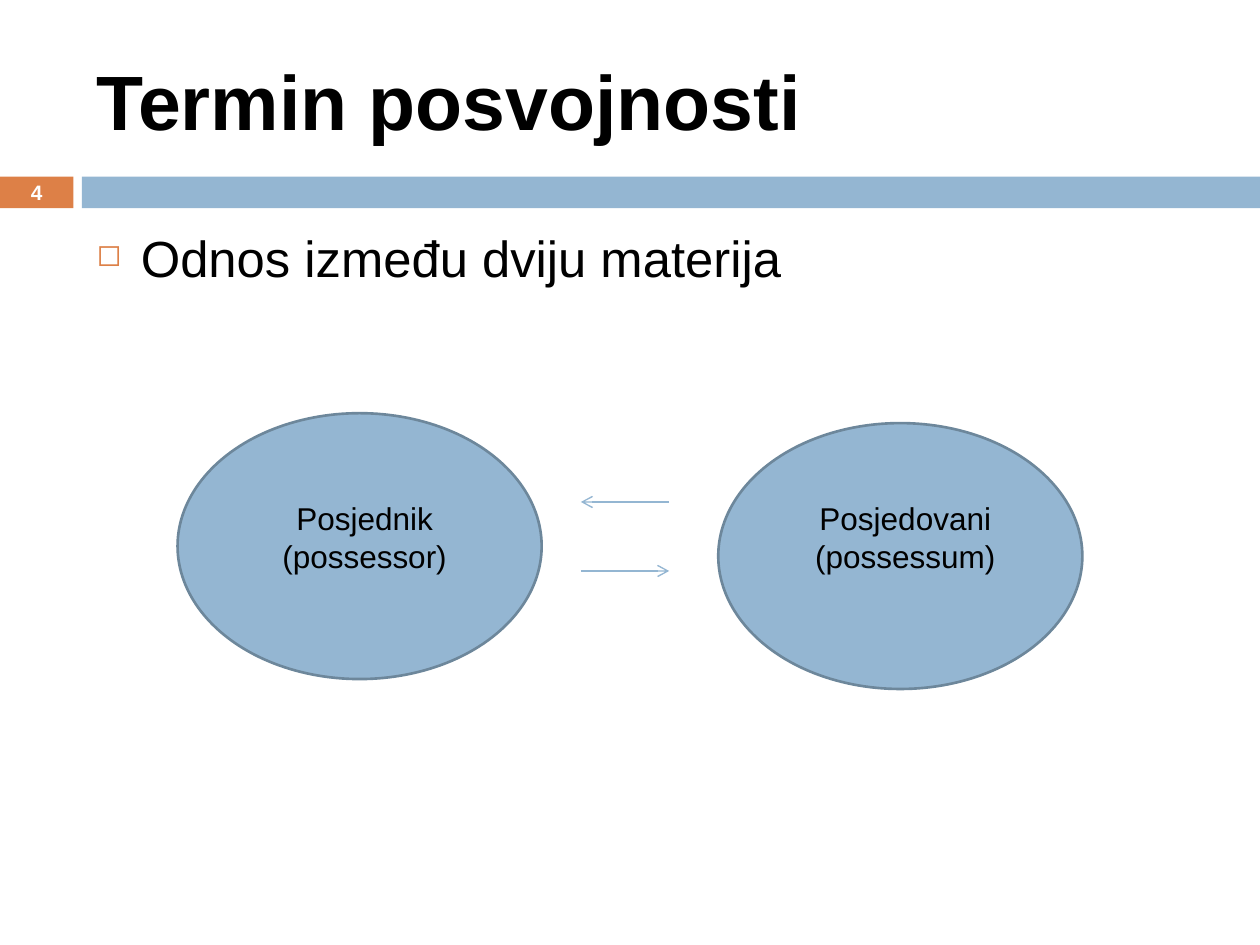
from lxml import etree
from pptx import Presentation
from pptx.dml.color import RGBColor
from pptx.enum import shapes, text
from pptx.oxml.ns import qn
from pptx.util import Cm, Pt

COLORS = {
    "blue": "94B6D2",
    "outline": "6D879B",
    "orange": "DD8047",
    "black": "000000",
    "white": "FFFFFF",
}


def rgb(name):
    return RGBColor.from_string(COLORS[name])


def write(tf, content, size=18, color="black", bold=False,
          align=text.PP_ALIGN.LEFT, anchor=text.MSO_ANCHOR.TOP):
    tf.word_wrap = True
    tf.vertical_anchor = anchor
    p = tf.paragraphs[0]
    p.alignment = align
    r = p.add_run()
    r.text = content
    r.font.name = "Arial"
    r.font.size = Pt(size)
    r.font.bold = bold
    r.font.color.rgb = rgb(color)
    return p


class SlideBuilder:
    font_size = 18
    line_width = 0.79

    def __init__(self, slide):
        self.s = slide

    def shape(self, kind, box, fill, line=None):
        sp = self.s.shapes.add_shape(kind, *map(Cm, box))
        sp.shadow.inherit = False
        sp.fill.solid()
        sp.fill.fore_color.rgb = rgb(fill)
        if line:
            sp.line.color.rgb = rgb(line)
            sp.line.width = Pt(1.5)
        else:
            sp.line.fill.background()
        return sp

    def label(self, content, box, **style):
        sp = self.s.shapes.add_textbox(*map(Cm, box))
        return write(sp.text_frame, content, **{"size": self.font_size, **style})

    def bullet(self, content, box, **style):
        p = self.label(content, box, **style)
        p.space_before = Pt(7)
        pPr = p._p.get_or_add_pPr()
        pPr.set("marL", str(Cm(0.89)))
        pPr.set("indent", str(Cm(-0.89)))
        color = etree.SubElement(pPr, qn("a:buClr"))
        etree.SubElement(color, qn("a:srgbClr"), val=COLORS["orange"])
        etree.SubElement(pPr, qn("a:buSzPct"), val="60000")
        etree.SubElement(pPr, qn("a:buChar"), char="◻")

    def arrow(self, x1, x2, y):
        sp = self.s.shapes.add_connector(
            shapes.MSO_CONNECTOR.STRAIGHT, Cm(x1), Cm(y), Cm(x2), Cm(y))
        sp.line.color.rgb = rgb("blue")
        sp.line.width = Pt(self.line_width)
        etree.SubElement(sp.line._get_or_add_ln(), qn("a:tailEnd"), type="arrow")
        etree.SubElement(sp._element.spPr, qn("a:effectLst"))


def main():
    prs = Presentation()
    prs.slide_width, prs.slide_height = Cm(25.4), Cm(19.05)
    b = SlideBuilder(prs.slides.add_slide(prs.slide_layouts[6]))
    rect, oval = shapes.MSO_SHAPE.RECTANGLE, shapes.MSO_SHAPE.OVAL
    center, middle = text.PP_ALIGN.CENTER, text.MSO_ANCHOR.MIDDLE

    b.shape(rect, (0, 3.56, 1.48, 0.64), "orange")
    b.shape(rect, (1.65, 3.56, 23.75, 0.64), "blue")
    b.label("Termin posvojnosti", (1.7, 0.64, 22.66, 2.74),
            size=44, bold=True, anchor=middle)
    b.bullet("Odnos između dviju materija", (1.7, 4.45, 22.66, 12.5), size=29)

    for content, x, y, text_x, text_w in (
        ("Posjednik (possessor)", 3.58, 8.33, 4.57, 5.56),
        ("Posjedovani (possessum)", 14.48, 8.53, 15.67, 5.16),
    ):
        b.shape(oval, (x, y, 7.34, 5.36), "blue", "outline")
        b.label(content, (text_x, 9.93, text_w, 1.8), align=center)

    b.arrow(11.71, 13.49, 11.51)
    b.arrow(13.49, 11.71, 10.12)
    b.label("4", (0, 3.53, 1.48, 0.69), size=11.9, color="white",
            bold=True, align=center, anchor=middle)
    prs.save("out.pptx")


if __name__ == "__main__":
    main()
